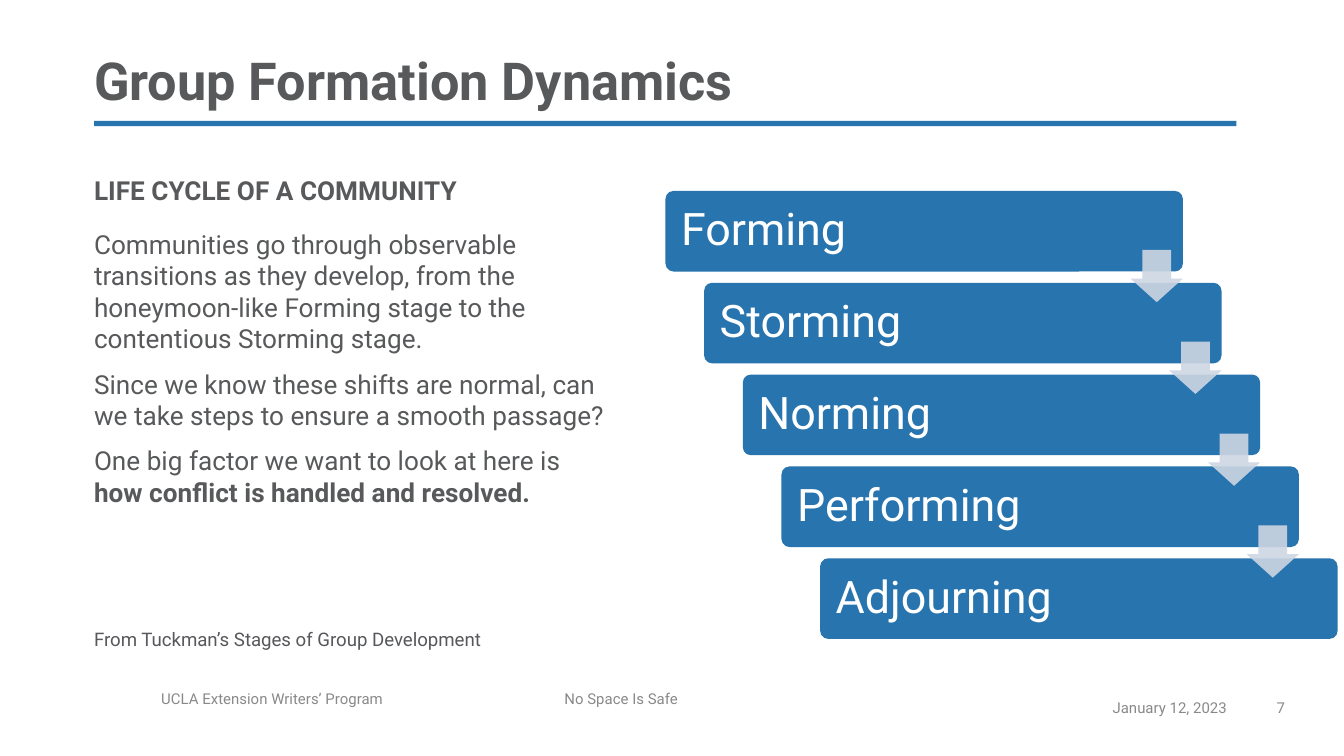
from lxml.etree import SubElement
from pptx import Presentation
from pptx.dml.color import RGBColor
from pptx.enum.shapes import MSO_SHAPE
from pptx.enum.text import MSO_ANCHOR, MSO_AUTO_SIZE, PP_ALIGN
from pptx.oxml.ns import qn
from pptx.util import Pt

BLUE = RGBColor(0x27, 0x74, 0xAE)
ARROW = RGBColor(0xCD, 0xD6, 0xE3)
DARK = RGBColor(0x58, 0x59, 0x5B)
SOURCE = RGBColor(0x57, 0x58, 0x5B)
GRAY = RGBColor(0x89, 0x89, 0x89)
WHITE = RGBColor(0xFF, 0xFF, 0xFF)
FONT = "Roboto"
LEFT = 50.4

prs = Presentation()
prs.slide_width, prs.slide_height = Pt(720), Pt(405)
s = prs.slides.add_slide(prs.slide_layouts[5])


def add_shape(kind, x, y, w, h, color):
    sp = s.shapes.add_shape(kind, Pt(x), Pt(y), Pt(w), Pt(h))
    sp.shadow.inherit = False
    sp.fill.solid()
    sp.fill.fore_color.rgb = color
    sp.line.fill.background()
    return sp


def set_text(sp, paragraphs, size, color, right=0, wrap=True):
    tf = sp.text_frame
    tf.word_wrap = wrap
    tf.auto_size = MSO_AUTO_SIZE.NONE
    tf.margin_left = tf.margin_top = tf.margin_bottom = 0
    tf.margin_right = Pt(right)
    for i, runs in enumerate(paragraphs):
        p = tf.add_paragraph() if i else tf.paragraphs[0]
        p.alignment = PP_ALIGN.LEFT
        if i:
            p.space_before = Pt(7.5)
        for text, bold in runs:
            r = p.add_run()
            r.text = text
            r.font.name = FONT
            r.font.size = Pt(size)
            r.font.bold = bold
            r.font.color.rgb = color
    return tf


title = s.shapes.title
title.left, title.top, title.width, title.height = Pt(LEFT), Pt(28.8), Pt(612), Pt(31)
tf = set_text(title, [[("Group Formation Dynamics", True)]], 28, DARK)
tf.vertical_anchor = MSO_ANCHOR.BOTTOM
tf.paragraphs[0].line_spacing = 0.9
add_shape(MSO_SHAPE.RECTANGLE, LEFT, 64.8, 612, 2.9, BLUE)

heading = s.shapes.add_textbox(Pt(LEFT), Pt(93.6), Pt(302.4), Pt(17))
set_text(heading, [[("LIFE CYCLE OF A COMMUNITY", True)]], 14, DARK, right=28.8)

body = s.shapes.add_textbox(Pt(LEFT), Pt(122.4), Pt(302.4), Pt(152))
set_text(body, [
    [("Communities go through observable transitions as they develop, from the "
      "honeymoon-like Forming stage to the contentious Storming stage.", False)],
    [("Since we know these shifts are normal, can we take steps to ensure a "
      "smooth passage?", False)],
    [("One big factor we want to look at here is ", False),
     ("how conflict is handled and resolved.", True)],
], 14, DARK, right=28.8)

source = s.shapes.add_textbox(Pt(LEFT), Pt(336.4), Pt(213), Pt(12.2))
set_text(source, [[("From Tuckman’s Stages of Group Development", False)]], 10, SOURCE, wrap=False)

stages = ["Forming", "Storming", "Norming", "Performing", "Adjourning"]
X0, Y0, DX, DY = 356.5, 102.3, 20.72, 49.2
for i, stage in enumerate(stages):
    sp = add_shape(MSO_SHAPE.ROUNDED_RECTANGLE, X0 + i * DX, Y0 + i * DY, 277.2, 43.2, BLUE)
    sp.adjustments[0] = 0.1
    tf = set_text(sp, [[(stage, False)]], 24, WHITE)
    tf.margin_left = Pt(7.2)
    tf.vertical_anchor = MSO_ANCHOR.MIDDLE
    tf.paragraphs[0].line_spacing = 0.9

for i in range(len(stages) - 1):
    sp = add_shape(MSO_SHAPE.DOWN_ARROW, X0 + 249.2 + i * DX, Y0 + 31.6 + i * DY, 28, 28, ARROW)
    sp.adjustments[0], sp.adjustments[1] = 0.55, 0.45
    clr = sp.fill._xPr.find(".//" + qn("a:srgbClr"))
    SubElement(clr, qn("a:alpha")).set("val", "90000")

footers = [
    ("UCLA Extension Writers’ Program", 86.4, 369.5, 208.8, PP_ALIGN.LEFT),
    ("No Space Is Safe", 302.4, 369.5, 273.6, PP_ALIGN.LEFT),
    ("January 12, 2023", 583.2, 374.4, 74.2, PP_ALIGN.RIGHT),
    ("7", 684, 374.4, 36, PP_ALIGN.LEFT),
]
for text, x, y, w, align in footers:
    sp = s.shapes.add_textbox(Pt(x), Pt(y), Pt(w), Pt(28.8))
    tf = set_text(sp, [[(text, False)]], 8, GRAY)
    tf.paragraphs[0].alignment = align

prs.save("out.pptx")
